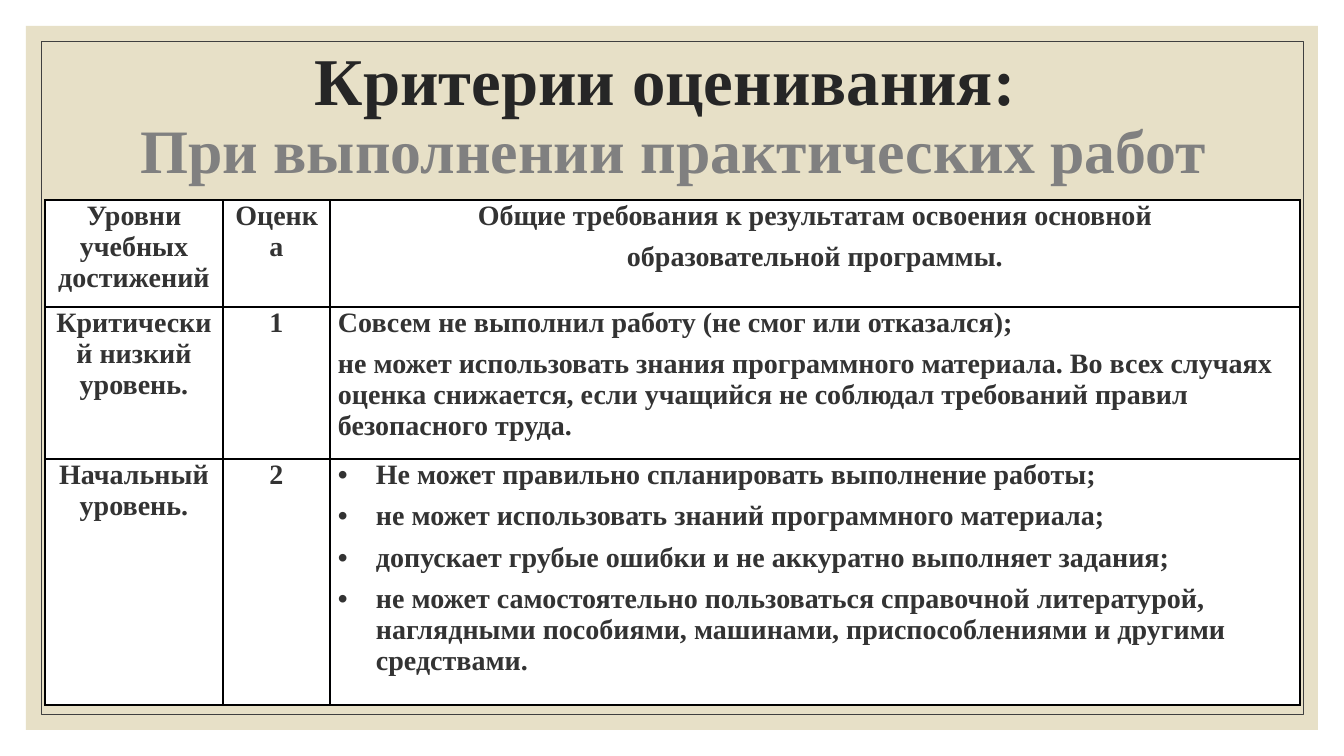
from lxml import etree
from pptx import Presentation
from pptx import util as u
from pptx.dml.color import RGBColor
from pptx.enum import shapes, text
from pptx.oxml import ns

PX = 914400 / 100.8
FONT = "Times New Roman"


def px(n):
    return u.Emu(round(n * PX))


def add_run(paragraph, words, size, color):
    run = paragraph.add_run()
    run.text = words
    run.font.name = FONT
    run.font.size = u.Pt(size)
    run.font.bold = True
    run.font.color.rgb = RGBColor.from_string(color)


deck = Presentation()
deck.slide_width, deck.slide_height = px(1344), px(756)
slide = deck.slides.add_slide(deck.slide_layouts[6])

backdrop = slide.shapes.add_shape(shapes.MSO_SHAPE.RECTANGLE, px(26), px(26), px(1292), px(704))
backdrop.fill.solid()
backdrop.fill.fore_color.rgb = RGBColor.from_string("E7E0C7")
backdrop.line.fill.background()
frame = slide.shapes.add_shape(shapes.MSO_SHAPE.RECTANGLE, px(41), px(41), px(1262), px(673))
frame.fill.background()
frame.line.color.rgb = RGBColor.from_string("404040")
frame.line.width = u.Pt(0.5)
for panel in (backdrop, frame):
    panel.shadow.inherit = False

heading = slide.shapes.add_textbox(px(89), px(47), px(1170), px(141)).text_frame
heading.word_wrap = True
heading.vertical_anchor = text.MSO_ANCHOR.MIDDLE
heading_lines = heading.paragraphs[0]
heading_lines.alignment = text.PP_ALIGN.CENTER
heading_lines.line_spacing = 0.9
add_run(heading_lines, "Критерии оценивания: ", 47.7, "262626")
heading_lines.add_line_break()
add_run(heading_lines, "При выполнении практических работ", 44.1, "808080")

levels = [
    (["Уровни учебных достижений"], ["Оценка"],
     ["Общие требования к результатам освоения основной",
      "образовательной программы."]),
    (["Критический низкий уровень."], ["1"],
     ["Совсем не выполнил работу (не смог или отказался);",
      "не может использовать знания программного материала. Во всех случаях оценка "
      "снижается, если учащийся не соблюдал требований правил безопасного труда."]),
    (["Начальный уровень."], ["2"],
     ["Не может правильно спланировать выполнение работы;",
      "не может использовать знаний программного материала;",
      "допускает грубые ошибки и не аккуратно выполняет задания;",
      "не может самостоятельно пользоваться справочной литературой, наглядными "
      "пособиями, машинами, приспособлениями и другими средствами."]),
]
column_widths = [178, 107, 970]
row_heights = [107, 152, 246]
criteria = slide.shapes.add_table(3, 3, px(45), px(200), px(sum(column_widths)),
                                  px(sum(row_heights))).table
for column, width in zip(criteria.columns, column_widths):
    column.width = px(width)
for row, height in zip(criteria.rows, row_heights):
    row.height = px(height)

for r, level in enumerate(levels):
    for c, statements in enumerate(level):
        cell = criteria.cell(r, c)
        cell.margin_left = cell.margin_right = px(8)
        cell.margin_top = cell.margin_bottom = 0
        for i, statement in enumerate(statements):
            body = cell.text_frame
            paragraph = body.paragraphs[0] if i == 0 else body.add_paragraph()
            paragraph.space_after = u.Pt(7.5)
            centred = r == 0 or c < 2
            paragraph.alignment = text.PP_ALIGN.CENTER if centred else text.PP_ALIGN.LEFT
            add_run(paragraph, statement, 20, "333333")
            if r == 2 and c == 2:
                props = paragraph._p.get_or_add_pPr()
                props.set("marL", str(px(38)))
                props.set("indent", str(px(-38)))
                etree.SubElement(props, ns.qn("a:buFont"), typeface="Arial")
                etree.SubElement(props, ns.qn("a:buChar"), char="•")
        cell_props = cell._tc.get_or_add_tcPr()
        for side in ("a:lnL", "a:lnR", "a:lnT", "a:lnB"):
            border = etree.SubElement(cell_props, ns.qn(side), w=str(u.Pt(1)))
            ink = etree.SubElement(border, ns.qn("a:solidFill"))
            etree.SubElement(ink, ns.qn("a:srgbClr"), val="000001")
        cell.fill.solid()
        cell.fill.fore_color.rgb = RGBColor.from_string("FFFFFF")

deck.save("out.pptx")
